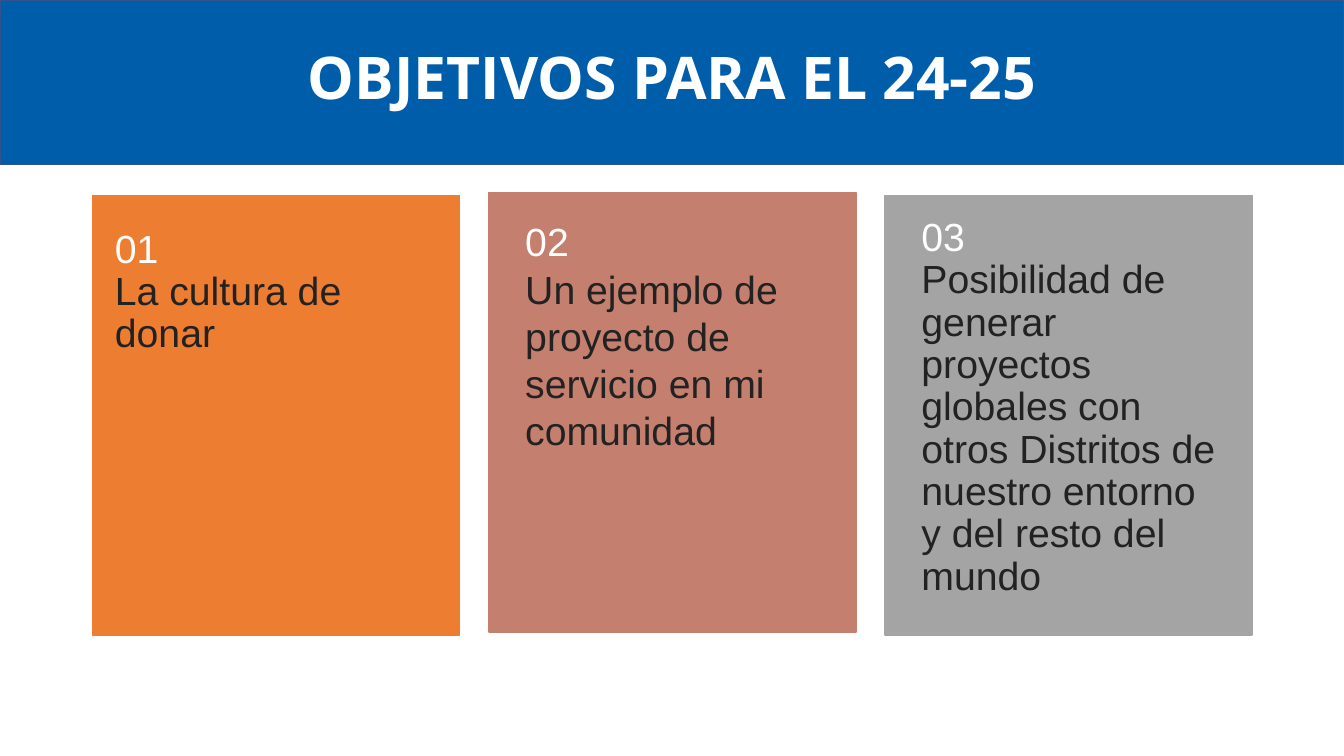
from dataclasses import dataclass

from pptx import Presentation
from pptx.dml.color import RGBColor
from pptx.enum.shapes import MSO_SHAPE as Preset
from pptx.enum.text import MSO_ANCHOR as Anchor, MSO_AUTO_SIZE as AutoSize, PP_ALIGN as Align
from pptx.util import Inches, Pt


@dataclass(frozen=True)
class Theme:
    band: str = "005DAA"
    band_line: str = "31538F"
    light: str = "FFFFFF"
    dark: str = "222222"
    orange: str = "ED7D31"
    rose: str = "C47F6E"
    gray: str = "A4A4A4"
    title_font: str = "Open Sans"
    body_font: str = "Arial"
    title_size: int = 42
    body_size: int = 28


THEME = Theme()

# Card grid, in percent of the slide width
CARD_LEFT, CARD_WIDTH, CARD_PITCH = 6.9, 27.3, 29.48
CARD_HEIGHT = 58.13  # percent of the slide height


def write(paragraph, text, *, font, size, color, bold=False, align=Align.LEFT, spacing=0.9):
    paragraph.alignment = align
    paragraph.line_spacing = spacing
    paragraph.space_before = paragraph.space_after = Pt(0)
    run = paragraph.add_run()
    run.text = text
    run.font.name = font
    run.font.size = Pt(size)
    run.font.bold = bold
    run.font.color.rgb = RGBColor.from_string(color)


class SlideBuilder:
    def __init__(self, presentation, theme):
        self.presentation = presentation
        self.theme = theme
        self.slide = presentation.slides.add_slide(presentation.slide_layouts[5])

    def area(self, left, top, width, height):
        """Turn percentages of the slide into lengths."""
        across = self.presentation.slide_width / 100
        down = self.presentation.slide_height / 100
        return round(left * across), round(top * down), round(width * across), round(height * down)

    def rectangle(self, area, fill, line):
        shape = self.slide.shapes.add_shape(Preset.RECTANGLE, *self.area(*area))
        shape.shadow.inherit = False
        shape.fill.solid()
        shape.fill.fore_color.rgb = RGBColor.from_string(fill)
        shape.line.color.rgb = RGBColor.from_string(line)
        shape.line.width = Pt(1)
        return shape

    def frame(self, shape, anchor, side, top, bottom):
        frame = shape.text_frame
        frame.word_wrap = True
        frame.auto_size = AutoSize.NONE
        frame.vertical_anchor = anchor
        frame.margin_left = frame.margin_right = Inches(side)
        frame.margin_top, frame.margin_bottom = Inches(top), Inches(bottom)
        return frame

    def title(self, text, area):
        title = self.slide.shapes.title
        title.left, title.top, title.width, title.height = self.area(*area)
        frame = self.frame(title, Anchor.BOTTOM, 0.1, 0.05, 0.05)
        write(frame.paragraphs[0], text, font=self.theme.title_font, size=self.theme.title_size,
              color=self.theme.light, bold=True, align=Align.CENTER)
        return title

    def card(self, column, text, *, fill, top, text_top, text_height, shift=0, bottom=0.18, spacing=0.9):
        left = CARD_LEFT + column * CARD_PITCH
        self.rectangle((left, top, CARD_WIDTH, CARD_HEIGHT), fill, fill)
        box = self.slide.shapes.add_textbox(
            *self.area(left + shift, text_top, CARD_WIDTH, text_height))
        frame = self.frame(box, Anchor.MIDDLE, 0.36, 0.18, bottom)
        style = dict(font=self.theme.body_font, size=self.theme.body_size)
        write(frame.paragraphs[0], f"{column + 1:02}", color=self.theme.light, **style)
        write(frame.add_paragraph(), text, color=self.theme.dark, spacing=spacing, **style)


def main():
    presentation = Presentation()
    presentation.slide_width, presentation.slide_height = Inches(13.33), Inches(7.5)
    builder = SlideBuilder(presentation, THEME)

    # Header: the band sits behind the title
    band = builder.rectangle((0, 0, 100, 21.73), THEME.band, THEME.band_line)
    title = builder.title("OBJETIVOS PARA EL 24-25", (0, 6.27, 100, 9.2))
    title.element.addprevious(band.element)

    # Goal cards
    cards = [
        ("La cultura de donar",
         dict(fill=THEME.orange, top=25.87, text_top=21.2, text_height=37.87,
              shift=-1.05, bottom=0.39)),
        ("Un ejemplo de proyecto de servicio en mi comunidad",
         dict(fill=THEME.rose, top=25.47, text_top=25.87, text_height=44,
              bottom=0.65, spacing=1.0)),
        ("Posibilidad de generar proyectos globales con otros Distritos de "
         "nuestro entorno y del resto del mundo",
         dict(fill=THEME.gray, top=25.87, text_top=24.4, text_height=59.2)),
    ]
    for column, (text, layout) in enumerate(cards):
        builder.card(column, text, **layout)

    presentation.save("out.pptx")


if __name__ == "__main__":
    main()
